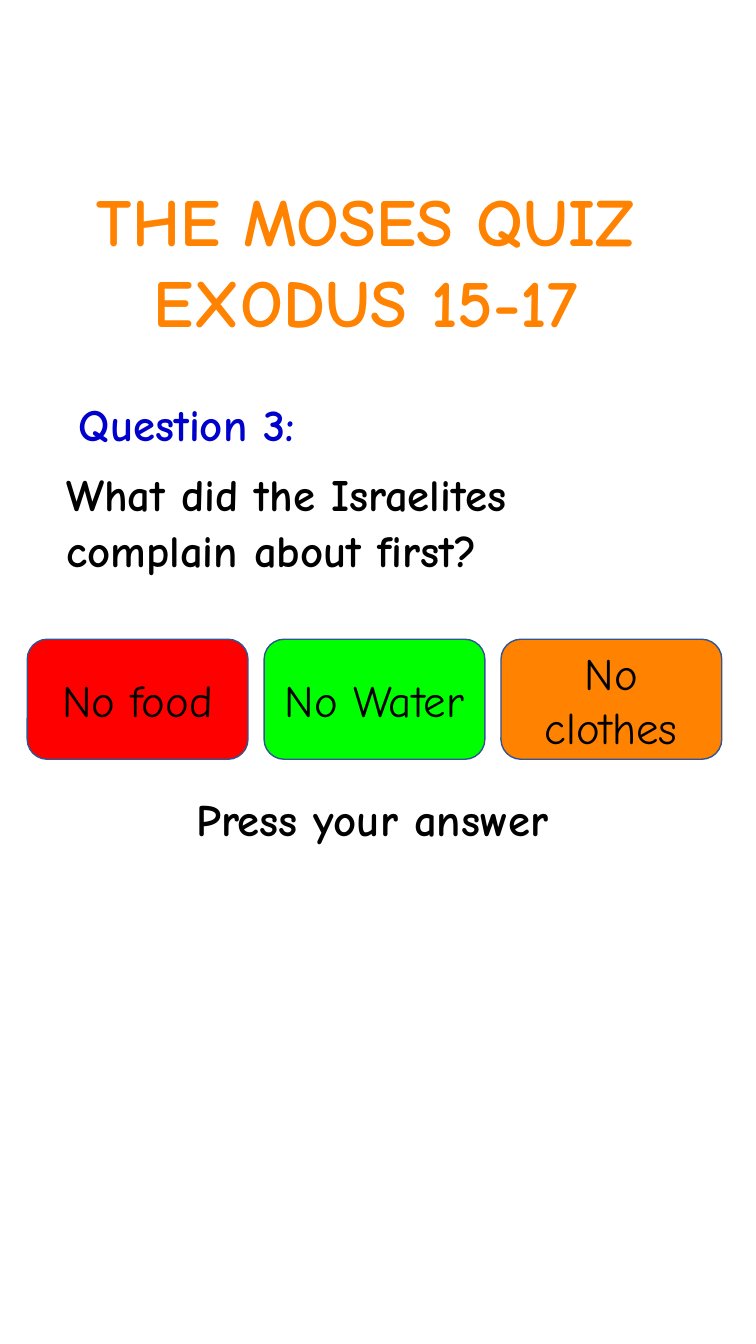
from dataclasses import dataclass

from pptx import Presentation
from pptx import util as u
from pptx.dml.color import RGBColor as Rgb
from pptx.enum import shapes, text


@dataclass(frozen=True)
class Theme:
    """Hold the colours, font and type sizes of the quiz."""
    font: str = "Comic Neue"
    head: int = 48
    body: int = 32
    black: str = "000000"
    blue: str = "0000CC"
    red: str = "FF0000"
    green: str = "00FF00"
    gold: str = "FF8200"
    edge: str = "325491"


class Quiz:
    """Draw quiz parts on a slide, placed in columns and rows of a tenth of an inch."""

    def __init__(self, deck, theme):
        """Add a blank slide to the deck."""
        self.theme = theme
        self.slide = deck.slides.add_slide(deck.slide_layouts[6])
        self.col = deck.slide_width / 75
        self.row = deck.slide_height / 133.3

    def place(self, x, y, w, h):
        """Turn grid units into lengths."""
        return (round(x * self.col), round(y * self.row),
                round(w * self.col), round(h * self.row))

    def letter(self, frame, lines, size, tint, bold=True, wrap=True, para=None):
        """Fill a text frame with one paragraph per line."""
        frame.word_wrap = wrap
        frame.text = "\n".join(lines)
        for p in frame.paragraphs:
            for key, val in (para or {}).items():
                setattr(p, key, val)
            look = {"name": self.theme.font, "size": u.Pt(size), "bold": bold}
            for run in p.runs:
                for key, val in look.items():
                    setattr(run.font, key, val)
                run.font.color.rgb = Rgb.from_string(tint)

    def label(self, area, lines, size, tint, wrap=True, **para):
        """Add a bold text box."""
        box = self.slide.shapes.add_textbox(*self.place(*area))
        self.letter(box.text_frame, lines, size, tint, wrap=wrap, para=para)

    def button(self, area, line, fill):
        """Add a rounded answer button."""
        box = self.slide.shapes.add_shape(
            shapes.MSO_SHAPE.ROUNDED_RECTANGLE, *self.place(*area))
        box.shadow.inherit = False
        box.fill.solid()
        box.fill.fore_color.rgb = Rgb.from_string(fill)
        box.line.color.rgb = Rgb.from_string(self.theme.edge)
        box.line.width = u.Pt(1)
        box.text_frame.vertical_anchor = text.MSO_ANCHOR.MIDDLE
        self.letter(box.text_frame, [line], self.theme.body, self.theme.black,
                    bold=False, para={"alignment": text.PP_ALIGN.CENTER})


def main():
    """Build the quiz slide and save it."""
    deck = Presentation()
    deck.slide_width, deck.slide_height = u.Inches(7.5), u.Inches(13.33)
    t = Theme()
    quiz = Quiz(deck, t)
    mid = text.PP_ALIGN.CENTER
    gap = u.Pt(7.5)

    quiz.label((3, 17.3, 68.9, 17.2), ["THE MOSES QUIZ ", "EXODUS 15-17 "],
               t.head, t.gold, wrap=False, alignment=mid)
    quiz.label((4.7, 38.9, 27.7, 6.4), ["Question 3:"],
               t.body, t.blue, wrap=False, alignment=mid)
    quiz.label((5.6, 45.6, 63.6, 14.6),
               ["What did the Israelites complain about first?"],
               t.body, t.black, line_spacing=u.Pt(40), space_before=gap)
    quiz.label((18.5, 78.6, 42.2, 7.2), ["Press your answer"],
               t.body, t.black, line_spacing=0.9, space_before=gap)

    picks = [("No food", t.red), ("No Water", t.green), ("No clothes", t.gold)]
    for i, (line, fill) in enumerate(picks):
        quiz.button((2.7 + 23.5 * i, 63.4, 21.9, 11.9), line, fill)

    deck.save("out.pptx")


if __name__ == "__main__":
    main()
